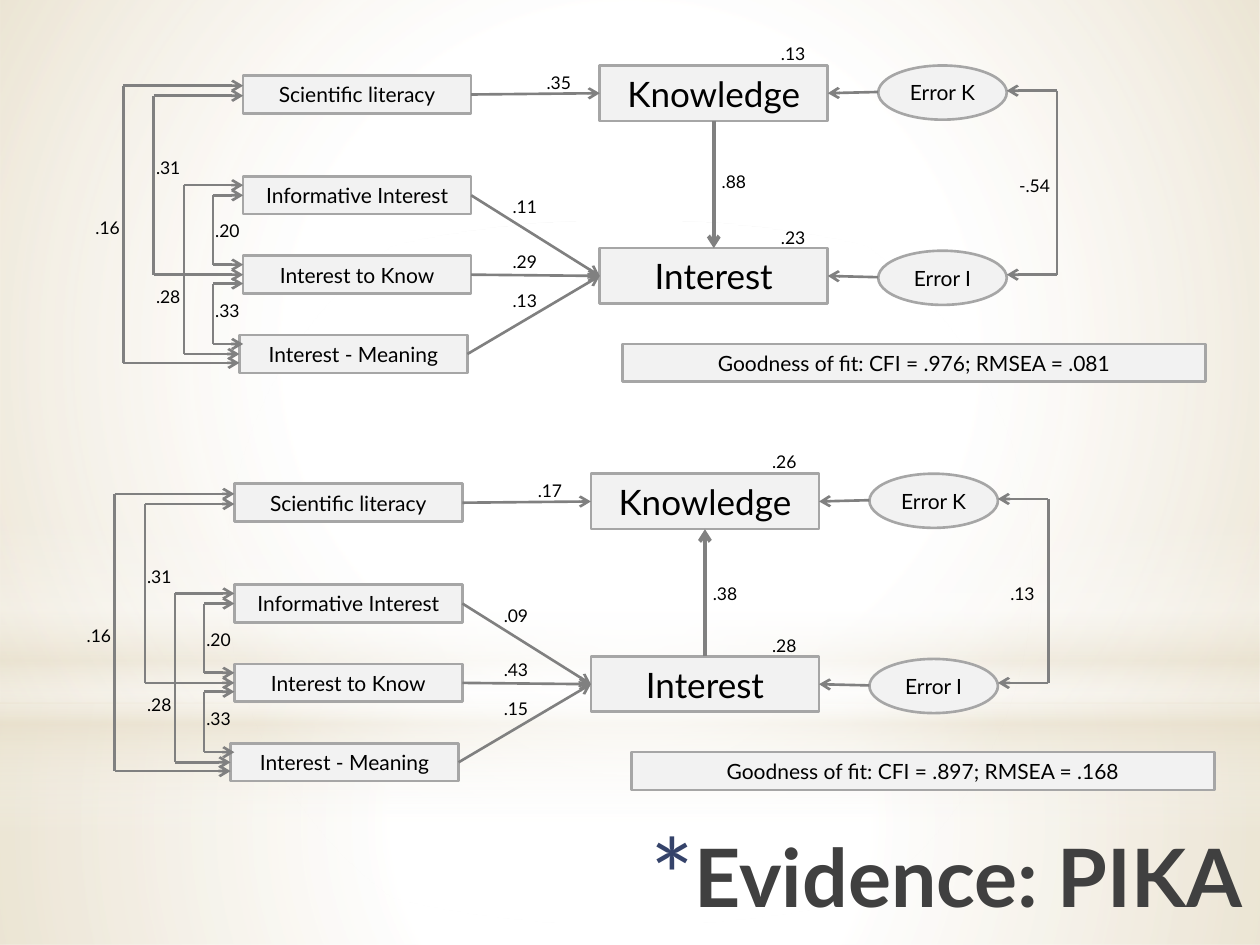
"""Build the slide comparing two path models of knowledge and interest."""
import dataclasses
import typing

import lxml.etree
import pptx
import pptx.dml.color
import pptx.enum.shapes
import pptx.enum.text
import pptx.oxml.ns
import pptx.util

Inches = pptx.util.Inches
Pt = pptx.util.Pt
qn = pptx.oxml.ns.qn
SHAPE = pptx.enum.shapes.MSO_SHAPE
ALIGN = pptx.enum.text.PP_ALIGN
FONT = "Lato"
COLORS = {
    "box": "F2F2F2", "border": "A6A6A6", "line": "808080", "text": "000000",
    "title": "404040", "star": "35436A", "white": "FFFFFF", "sand": "E7DEC9",
}


class Node(typing.NamedTuple):
    text: str
    x: float
    y: float
    w: float = 1.81
    h: float = 0.3
    size: int = 12
    kind: typing.Any = SHAPE.RECTANGLE


class Link(typing.NamedTuple):
    start: str
    end: str
    begin_site: int = 3
    end_site: int = 1


class Line(typing.NamedTuple):
    x1: float
    y1: float
    x2: float
    y2: float
    arrow: bool = True


class Loop(typing.NamedTuple):
    x: float
    top: tuple
    bottom: tuple


class Backdrop(typing.NamedTuple):
    kind: typing.Any
    box: tuple
    stops: list
    angle: typing.Optional[int] = None


@dataclasses.dataclass
class Model:
    dx: float
    dy: float
    values: list
    fit: str
    fit_x: float
    effect: Link
    effect_y: float


BACKDROPS = [
    Backdrop(SHAPE.RECTANGLE, (0, 5.58, 10, 1.92),
             [(0, "white", 91), (37, "white", 76), (100, "sand", 79)]),
    Backdrop(SHAPE.RECTANGLE, (0, 0, 10, 5.58),
             [(0, "white", 89), (48, "white", 62), (100, "sand", 79)]),
    Backdrop(SHAPE.RECTANGLE, (0, 4.12, 10, 2.5),
             [(0, "white", 0), (29, "white", 30), (45, "sand", 40),
              (55, "white", 26), (65, "sand", 60), (100, "white", 0)], 90),
    Backdrop(SHAPE.OVAL, (0, 1.75, 10, 5.58), [(0, "white", 100), (56, "white", 0)]),
]
NODES = [
    Node("Interest to Know", 1.93, 2.03),
    Node("Interest - Meaning", 1.9, 2.66),
    Node("Scientific literacy", 1.93, 0.6),
    Node("Informative Interest", 1.93, 1.4),
    Node("Interest", 4.76, 1.97, h=0.44, size=20),
    Node("Knowledge", 4.76, 0.52, h=0.44, size=20),
    Node("Error K", 6.97, 0.52, 1.02, 0.43, kind=SHAPE.OVAL),
    Node("Error I", 6.97, 1.99, 1.02, 0.43, kind=SHAPE.OVAL),
]
LINKS = [
    Link("Scientific literacy", "Knowledge"),
    Link("Informative Interest", "Interest"),
    Link("Interest to Know", "Interest"),
    Link("Interest - Meaning", "Interest"),
]
LOOPS = [
    Loop(8.39, (7.99, 0.72), (7.99, 2.18)),
    Loop(0.98, (1.93, 0.68), (1.9, 2.88)),
    Loop(1.22, (1.93, 0.76), (1.93, 2.18)),
    Loop(1.46, (1.93, 1.47), (1.9, 2.81)),
    Loop(1.69, (1.93, 1.55), (1.93, 2.1)),
    Loop(1.69, (1.93, 2.25), (1.93, 2.73)),
]
LABEL_SPOTS = [
    (1.61, 2.33), (1.61, 1.7), (1.14, 2.22), (1.14, 1.2), (0.66, 1.67),
    (4.24, 0.52), (3.97, 1.51), (3.97, 1.94), (3.97, 2.25),
    (6.1, 1.75), (6.1, 0.29), (7.99, 1.34),
]
SHARED = [".33", ".20", ".28", ".31", ".16"]
MODELS = [
    Model(0, 0, SHARED + [".35", ".11", ".29", ".13", ".23", ".13", "-.54", ".88"],
          "Goodness of fit: CFI = .976; RMSEA = .081", 4.94,
          Link("Knowledge", "Interest", 2, 0), 1.31),
    Model(-0.07, 3.24, SHARED + [".17", ".09", ".43", ".15", ".28", ".26", ".13", ".38"],
          "Goodness of fit: CFI = .897; RMSEA = .168", 5.08,
          Link("Interest", "Knowledge", 0, 2), 1.34),
]


def rgb(name: str) -> pptx.dml.color.RGBColor:
    return pptx.dml.color.RGBColor.from_string(COLORS[name])


def set_font(p, size: float, color: str = "text", bold: bool = False) -> None:
    p.font.name, p.font.size, p.font.bold = FONT, Pt(size), bold
    p.font.color.rgb = rgb(color)


def add_xml(parent, tag: str, **attrs):
    return lxml.etree.SubElement(parent, qn(tag), {k: str(v) for k, v in attrs.items()})


def draw_backdrop(slide, item: Backdrop) -> None:
    sp = slide.shapes.add_shape(item.kind, *map(Inches, item.box))
    sp.shadow.inherit = False
    sp.line.fill.background()
    sp.fill.background()
    spPr = sp._element.spPr
    fill = add_xml(spPr, "a:gradFill", rotWithShape=1)
    spPr.replace(spPr.find(qn("a:noFill")), fill)
    stops = add_xml(fill, "a:gsLst")
    for pos, color, opacity in item.stops:
        stop = add_xml(stops, "a:gs", pos=pos * 1000)
        clr = add_xml(stop, "a:srgbClr", val=COLORS[color])
        add_xml(clr, "a:alpha", val=opacity * 1000)
    if item.angle is None:
        shade = add_xml(fill, "a:path", path="circle")
        add_xml(shade, "a:fillToRect", l=50000, t=50000, r=50000, b=50000)
    else:
        add_xml(fill, "a:lin", ang=item.angle * 60000, scaled=0)


def draw_title(slide, text: str) -> None:
    sp = slide.shapes.title
    slide.shapes._spTree.append(sp._element)
    sp.left, sp.top, sp.width, sp.height = map(Inches, (0.6, 6.51, 9.36, 1.02))
    tf = sp.text_frame
    tf.text = text
    tf.auto_size = pptx.enum.text.MSO_AUTO_SIZE.NONE
    tf.vertical_anchor = pptx.enum.text.MSO_ANCHOR.TOP
    p = tf.paragraphs[0]
    p.alignment = ALIGN.RIGHT
    pPr = p._p.get_or_add_pPr()
    pPr.set("marL", str(Inches(0.35)))
    pPr.set("indent", str(Inches(-0.35)))
    add_xml(add_xml(pPr, "a:buClr"), "a:srgbClr", val=COLORS["star"])
    add_xml(pPr, "a:buSzPct", val=128000)
    add_xml(pPr, "a:buFont", typeface=FONT)
    add_xml(pPr, "a:buChar", char="*")
    set_font(p, 46, "title", True)


def draw_node(slide, node: Node, dx: float, dy: float):
    sp = slide.shapes.add_shape(node.kind, Inches(node.x + dx), Inches(node.y + dy),
                                Inches(node.w), Inches(node.h))
    sp.shadow.inherit = False
    sp.fill.solid()
    sp.fill.fore_color.rgb = rgb("box")
    sp.line.color.rgb = rgb("border")
    sp.line.width = Pt(1.5)
    sp.text_frame.text = node.text
    p = sp.text_frame.paragraphs[0]
    p.alignment = ALIGN.CENTER
    set_font(p, node.size)
    return sp


def draw_line(slide, line: Line, dx: float = 0, dy: float = 0, width: float = 1.5):
    cxn = slide.shapes.add_connector(
        pptx.enum.shapes.MSO_CONNECTOR.STRAIGHT, Inches(line.x1 + dx),
        Inches(line.y1 + dy), Inches(line.x2 + dx), Inches(line.y2 + dy))
    cxn.line.color.rgb = rgb("line")
    cxn.line.width = Pt(width)
    if line.arrow:
        add_xml(cxn.line._get_or_add_ln(), "a:tailEnd", type="arrow")
    add_xml(cxn._element.spPr, "a:effectLst")
    return cxn


def draw_link(slide, link: Link, nodes: dict, width: float = 1.5) -> None:
    cxn = draw_line(slide, Line(0, 0, 1, 1), width=width)
    cxn.begin_connect(nodes[link.start], link.begin_site)
    cxn.end_connect(nodes[link.end], link.end_site)


def draw_label(slide, text: str, x: float, y: float) -> None:
    width = 0.45 if text.startswith("-") else 0.4
    sp = slide.shapes.add_textbox(Inches(x), Inches(y), Inches(width), Inches(0.27))
    tf = sp.text_frame
    tf.word_wrap = False
    tf.auto_size = pptx.enum.text.MSO_AUTO_SIZE.SHAPE_TO_FIT_TEXT
    tf.text = text
    set_font(tf.paragraphs[0], 10)


def draw_model(slide, model: Model) -> None:
    dx, dy = model.dx, model.dy
    nodes = {node.text: draw_node(slide, node, dx, dy) for node in NODES}
    for link in LINKS:
        draw_link(slide, link, nodes)
    for error, target, y in (("Error K", "Knowledge", 0.73), ("Error I", "Interest", 2.2)):
        cxn = draw_line(slide, Line(6.97, y, 6.57, y), dx, dy)
        cxn.end_connect(nodes[target], 3)
    for x, top, bottom in LOOPS:
        draw_line(slide, Line(x, top[1], x, bottom[1], False), dx, dy)
        for end in (top, bottom):
            draw_line(slide, Line(x, end[1], *end), dx, dy)
    for text, (x, y) in zip(model.values, LABEL_SPOTS + [(5.63, model.effect_y)]):
        draw_label(slide, text, x + dx, y + dy)
    draw_node(slide, Node(model.fit, model.fit_x, 2.73, w=4.63), dx, dy)
    draw_link(slide, model.effect, nodes, 2.25)


def main() -> None:
    prs = pptx.Presentation()
    prs.slide_width, prs.slide_height = Inches(10), Inches(7.5)
    slide = prs.slides.add_slide(prs.slide_layouts[5])
    for item in BACKDROPS:
        draw_backdrop(slide, item)
    draw_title(slide, "Evidence: PIKA")
    for model in MODELS:
        draw_model(slide, model)
    prs.save("out.pptx")


if __name__ == "__main__":
    main()
